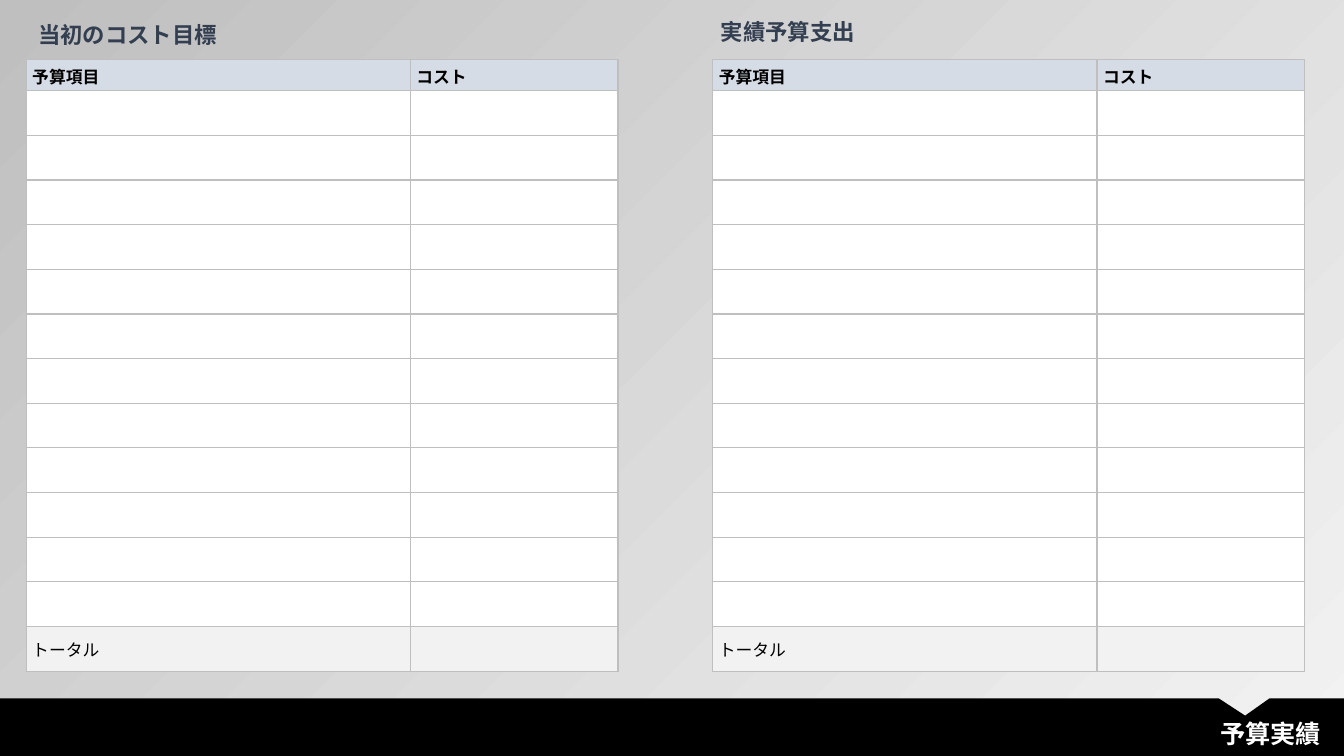
from lxml import etree
from pptx import Presentation
from pptx.dml.color import RGBColor
from pptx.enum.text import MSO_ANCHOR, MSO_AUTO_SIZE, PP_ALIGN
from pptx.oxml.ns import qn
from pptx.util import Inches, Pt

MIDDLE = MSO_ANCHOR.MIDDLE
GROW = MSO_AUTO_SIZE.SHAPE_TO_FIT_TEXT
RIGHT = PP_ALIGN.RIGHT

BLACK = RGBColor(0x00, 0x00, 0x00)
WHITE = RGBColor(0xFF, 0xFF, 0xFF)
NAVY = RGBColor(0x33, 0x3F, 0x50)
HEADER_BLUE = RGBColor(0xD6, 0xDC, 0xE5)
LIGHT_GREY = RGBColor(0xF2, 0xF2, 0xF2)
GREY = RGBColor(0xBF, 0xBF, 0xBF)

FONT = "League Spartan"
ITEM_ROWS = 12
COLUMN_WIDTHS = (3.81, 2.06)
HEADER_HEIGHT = 0.31
TABLE_TOP, TABLE_HEIGHT = 0.59, 6.07
ROW_HEIGHT = (TABLE_HEIGHT - HEADER_HEIGHT) / (ITEM_ROWS + 1)


def set_background(s):
    """Fill the slide with a diagonal grey gradient."""
    fill = s.background.fill
    fill.gradient()
    fill.gradient_angle = 135
    for stop, color in zip(fill.gradient_stops, (LIGHT_GREY, GREY)):
        stop.color.rgb = color


def add_run(p, text, size, color, bold=True):
    """Append one formatted run to a paragraph."""
    r = p.add_run()
    r.text = text
    r.font.name = FONT
    r.font.size = Pt(size)
    r.font.bold = bold
    r.font.color.rgb = color


def add_footer_band(s):
    """Draw the black band with a notch in its top edge."""
    points = [(0, 6.93), (12.09, 6.93), (12.35, 7.1), (12.59, 6.93),
              (13.33, 6.93), (13.33, 7.5), (0, 7.5)]
    points = [(Inches(x), Inches(y)) for x, y in points]
    builder = s.shapes.build_freeform(*points[0])
    builder.add_line_segments(points[1:], close=True)
    sp = builder.convert_to_shape()
    sp.shadow.inherit = False
    sp.fill.solid()
    sp.fill.fore_color.rgb = BLACK
    sp.line.fill.background()


def add_text(s, left, top, width, text, size, color):
    """Add a one-line text box and return its text frame."""
    sp = s.shapes.add_textbox(Inches(left), Inches(top), Inches(width), Inches(0.4))
    tf = sp.text_frame
    tf.word_wrap = True
    tf.auto_size = GROW
    add_run(tf.paragraphs[0], text, size, color)
    return tf


def add_heading(s, left, top, text):
    """Add the heading above a table."""
    tf = add_text(s, left, top, 5.58, text, 16, NAVY)
    tf.margin_left = tf.margin_right = Inches(0.12)
    tf.margin_top = tf.margin_bottom = Inches(0.06)
    p = tf.paragraphs[0]
    p.line_spacing = Pt(21.5)
    p.space_before = Pt(3.2)


def style_cell(cell, color):
    """Set the borders, fill and margins of a cell."""
    tc_pr = cell._tc.get_or_add_tcPr()
    for side in ("a:lnL", "a:lnR", "a:lnT", "a:lnB"):
        ln = etree.SubElement(tc_pr, qn(side), w=str(Pt(1)))
        fill = etree.SubElement(ln, qn("a:solidFill"))
        etree.SubElement(fill, qn("a:srgbClr"), val=str(GREY))
    cell.fill.solid()
    cell.fill.fore_color.rgb = color
    cell.vertical_anchor = MIDDLE
    cell.margin_left = cell.margin_right = Inches(0.06)
    cell.margin_top = cell.margin_bottom = 0


def add_budget_table(s, left):
    """Add a budget table with header, empty item rows and total."""
    rows = [("予算項目", "コスト")] + [("", "")] * ITEM_ROWS + [("トータル", "")]
    colors = [HEADER_BLUE] + [WHITE] * ITEM_ROWS + [LIGHT_GREY]
    table = s.shapes.add_table(
        len(rows), len(COLUMN_WIDTHS), Inches(left), Inches(TABLE_TOP),
        Inches(sum(COLUMN_WIDTHS)), Inches(TABLE_HEIGHT)).table
    table.first_row = table.horz_banding = False
    for column, width in zip(table.columns, COLUMN_WIDTHS):
        column.width = Inches(width)
    for i, (texts, color) in enumerate(zip(rows, colors)):
        table.rows[i].height = Inches(ROW_HEIGHT if i else HEADER_HEIGHT)
        for cell, text in zip(table.rows[i].cells, texts):
            style_cell(cell, color)
            if text:
                p = cell.text_frame.paragraphs[0]
                p.line_spacing = 1.07
                add_run(p, text, 12, BLACK, bold=i == 0)


def main():
    """Build the budget slide."""
    prs = Presentation()
    prs.slide_width, prs.slide_height = Inches(13.33), Inches(7.5)
    s = prs.slides.add_slide(prs.slide_layouts[6])
    set_background(s)
    add_footer_band(s)
    tf = add_text(s, 4.14, 7.08, 9.06, "予算実績", 18, WHITE)
    tf.paragraphs[0].alignment = RIGHT
    add_heading(s, 0.26, 0.12, "当初のコスト目標")
    add_heading(s, 7.03, 0.09, "実績予算支出")
    for left in (0.26, 7.07):
        add_budget_table(s, left)
    prs.save("out.pptx")


if __name__ == "__main__":
    main()
